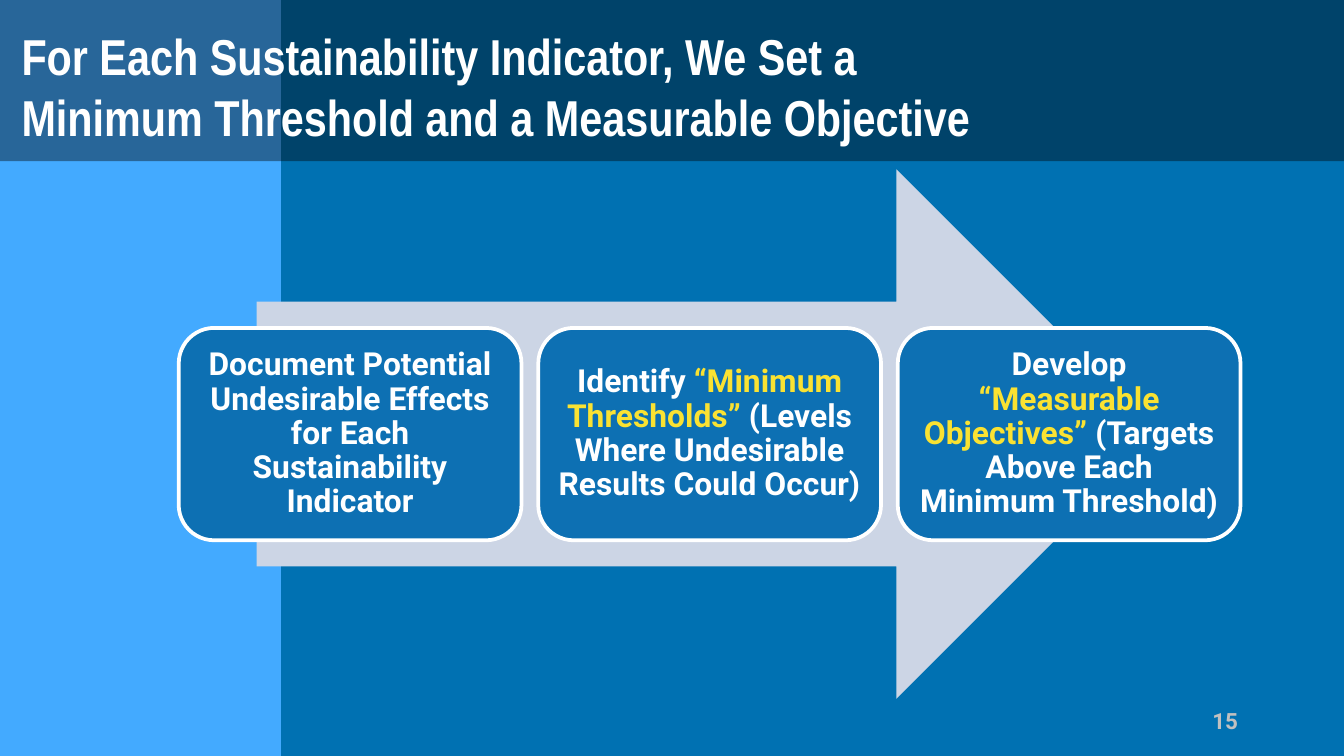
import lxml.etree
import pptx
import pptx.dml.color
import pptx.enum.shapes
import pptx.enum.text
import pptx.oxml.ns
import pptx.util

Inches = pptx.util.Inches
SHAPES = pptx.enum.shapes.MSO_SHAPE
ALIGN = pptx.enum.text.PP_ALIGN
MIDDLE = pptx.enum.text.MSO_ANCHOR.MIDDLE

TITLE = "For Each Sustainability Indicator, We Set a Minimum Threshold and a Measurable Objective"
STEPS = [
    [("Document Potential Undesirable Effects for Each Sustainability Indicator", "white")],
    [("Identify ", "white"), ("“Minimum Thresholds” ", "yellow"),
     ("(Levels Where Undesirable Results Could Occur)", "white")],
    [("Develop ", "white"), ("“Measurable Objectives” ", "yellow"),
     ("(Targets Above Each Minimum Threshold)", "white")],
]
PAGE_NUMBER = "15"

THEME = {
    "colors": {
        "background": "0071B2", "side": "43AAFF", "black": "000000", "arrow": "CCD5E5",
        "step": "0D70B3", "white": "FFFFFF", "yellow": "FAE232", "gray": "C0C0C0",
    },
    "title": {"name": "Arial Narrow", "size": pptx.util.Pt(27), "bold": True},
    "step": {"name": "Roboto", "size": pptx.util.Pt(17), "bold": True},
    "number": {"name": "Roboto", "size": pptx.util.Pt(12), "bold": True},
}
WIDTH = 10
HEIGHT = WIDTH * 9 / 16
BAND_HEIGHT = 1.2
FIRST_LEFT, LAST_LEFT = 1.33, 6.68
STEP_TOP, STEP_WIDTH, STEP_HEIGHT = 2.44, 2.55, 1.58
STEP_PITCH = (LAST_LEFT - FIRST_LEFT) / (len(STEPS) - 1)


def color(name):
    return pptx.dml.color.RGBColor.from_string(THEME["colors"][name])


def apply(target, values):
    for name, value in values.items():
        setattr(target, name, value)


def add_box(page, kind, place, fill):
    box = page.shapes.add_shape(kind, *map(Inches, place))
    box.shadow.inherit = False
    box.fill.solid()
    box.fill.fore_color.rgb = color(fill)
    box.line.fill.background()
    return box


def write(frame, spans, style, inset, **layout):
    margins = dict(zip(("margin_left", "margin_top", "margin_right", "margin_bottom"),
                       map(Inches, inset)))
    apply(frame, {"word_wrap": True, "auto_size": pptx.enum.text.MSO_AUTO_SIZE.NONE, **margins})
    para = frame.paragraphs[0]
    apply(para, layout)
    for text, tint in spans:
        span = para.add_run()
        span.text = text
        apply(span.font, THEME[style])
        span.font.color.rgb = color(tint)


def add_background(page):
    page.background.fill.solid()
    page.background.fill.fore_color.rgb = color("background")
    add_box(page, SHAPES.RECTANGLE, (0, 0, 2.09, HEIGHT), "side")
    band = add_box(page, SHAPES.RECTANGLE, (0, 0, WIDTH, BAND_HEIGHT), "black")
    tint = band.element.spPr.find(".//" + pptx.oxml.ns.qn("a:srgbClr"))
    lxml.etree.SubElement(tint, pptx.oxml.ns.qn("a:alpha"), val="40000")


def add_title(page):
    title = page.shapes.title
    page.shapes.element.append(title.element)
    apply(title, dict(zip(("left", "top", "width", "height"),
                          map(Inches, (0.12, 0.17, 7.24, 0.94)))))
    title.text_frame.vertical_anchor = MIDDLE
    write(title.text_frame, [(TITLE, "white")], "title", (0.04, 0.02, 0.04, 0.02),
          alignment=ALIGN.LEFT)


def add_steps(page):
    add_box(page, SHAPES.RIGHT_ARROW, (1.91, 1.26, 6.73, 3.94), "arrow")
    for index, spans in enumerate(STEPS):
        left = FIRST_LEFT + index * STEP_PITCH
        step = add_box(page, SHAPES.ROUNDED_RECTANGLE,
                       (left, STEP_TOP, STEP_WIDTH, STEP_HEIGHT), "step")
        step.line.color.rgb = color("white")
        step.line.width = pptx.util.Pt(2)
        step.text_frame.vertical_anchor = MIDDLE
        write(step.text_frame, spans, "step", (0.07,) * 4,
              alignment=ALIGN.CENTER, line_spacing=0.9)


def add_page_number(page):
    box = page.shapes.add_textbox(*map(Inches, (7.06, 5.21, 2.25, 0.3)))
    write(box.text_frame, [(PAGE_NUMBER, "gray")], "number", (0.1, 0.05, 0.1, 0.05),
          alignment=ALIGN.RIGHT)


def main():
    deck = pptx.Presentation()
    deck.slide_width, deck.slide_height = Inches(WIDTH), Inches(HEIGHT)
    page = deck.slides.add_slide(deck.slide_layouts.get_by_name("Title Only"))
    add_background(page)
    add_title(page)
    add_steps(page)
    add_page_number(page)
    deck.save("out.pptx")


if __name__ == "__main__":
    main()
